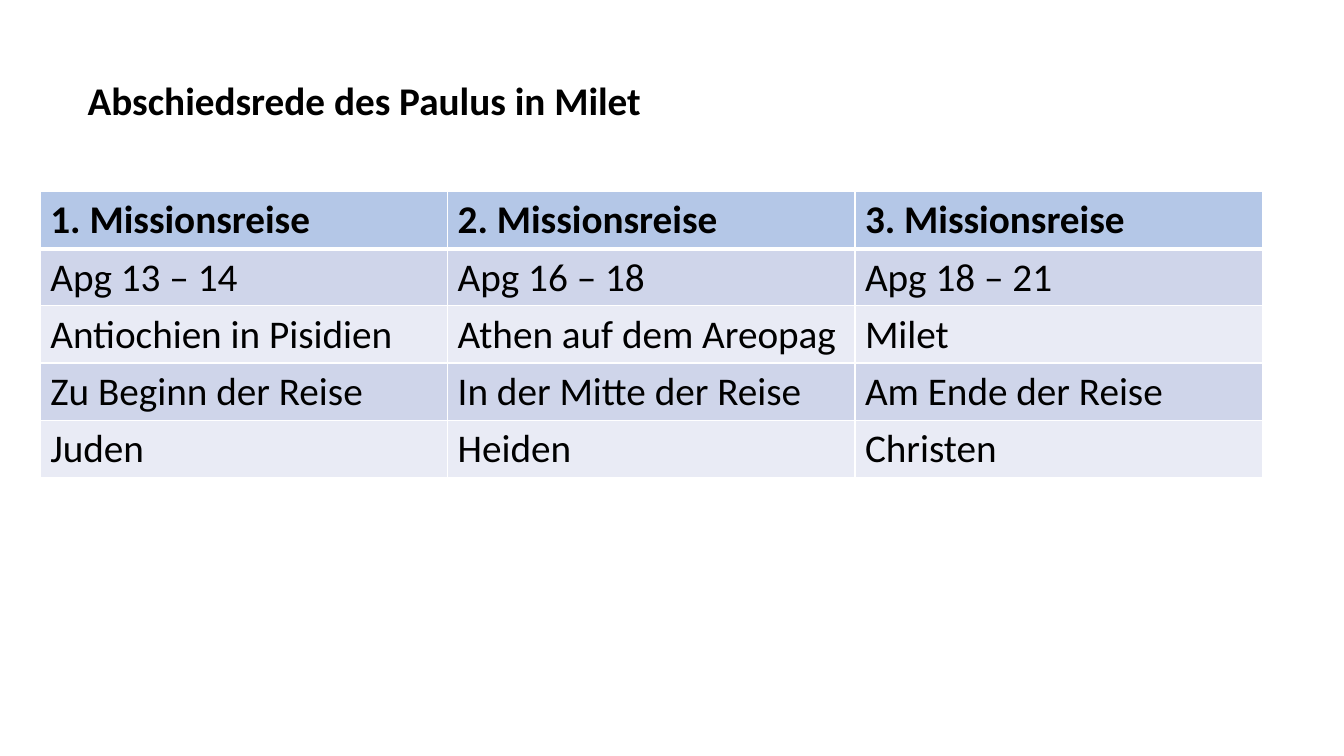
from lxml import etree
from pptx import Presentation
from pptx.dml.color import RGBColor
from pptx.enum.text import MSO_ANCHOR, MSO_AUTO_SIZE, PP_ALIGN
from pptx.oxml.ns import qn
from pptx.util import Inches, Pt

LEFT = PP_ALIGN.LEFT
TOP = MSO_ANCHOR.TOP
GROW = MSO_AUTO_SIZE.SHAPE_TO_FIT_TEXT
TITLE_ONLY = 5

COLOURS = {
    "text": "000000",
    "header": "B4C7E7",
    "band_dark": "CFD5EA",
    "band_light": "E9EBF5",
    "rule": "FFFFFF",
}

TITLE = "Abschiedsrede des Paulus in Milet"
JOURNEYS = [
    ["1. Missionsreise", "2. Missionsreise", "3. Missionsreise"],
    ["Apg 13 – 14", "Apg 16 – 18", "Apg 18 – 21"],
    ["Antiochien in Pisidien", "Athen auf dem Areopag", "Milet"],
    ["Zu Beginn der Reise", "In der Mitte der Reise", "Am Ende der Reise"],
    ["Juden", "Heiden", "Christen"],
]


def write_text(frame, text, font="Calibri", size=28, bold=False, colour="text"):
    """Fill a text frame with one left-aligned, formatted paragraph."""
    para = frame.paragraphs[0]
    para.alignment = LEFT
    span = para.add_run()
    span.text = text
    span.font.name = font
    span.font.size = Pt(size)
    span.font.bold = bold
    span.font.color.rgb = RGBColor.from_string(COLOURS[colour])


class SlideBuilder:
    """Places elements on one slide, with lengths in inches."""

    def __init__(self, page):
        self.page = page

    def title(self, text, left, top, width, height):
        box = self.page.shapes.title
        box.left, box.top = Inches(left), Inches(top)
        box.width, box.height = Inches(width), Inches(height)
        frame = box.text_frame
        frame.word_wrap = False
        frame.auto_size = GROW
        frame.vertical_anchor = TOP
        write_text(frame, text, bold=True)

    def table(self, rows, left, top, column_width, row_height):
        row_count, column_count = len(rows), len(rows[0])
        grid = self.page.shapes.add_table(
            row_count, column_count, Inches(left), Inches(top),
            Inches(column_width * column_count), Inches(row_height * row_count),
        ).table
        for row_index, row in enumerate(rows):
            for column_index, text in enumerate(row):
                cell = grid.cell(row_index, column_index)
                # Heavier rule between the header and the body
                self.borders(cell, top=3 if row_index == 1 else 1,
                             bottom=3 if row_index == 0 else 1)
                self.fill(cell, row_index)
                write_text(cell.text_frame, text, bold=row_index == 0)

    def fill(self, cell, row_index):
        band = "band_dark" if row_index % 2 else "band_light"
        cell.fill.solid()
        cell.fill.fore_color.rgb = RGBColor.from_string(
            COLOURS[band if row_index else "header"])

    def borders(self, cell, top, bottom):
        properties = cell._tc.get_or_add_tcPr()
        for side, width in (("L", 1), ("R", 1), ("T", top), ("B", bottom)):
            line = etree.SubElement(properties, qn(f"a:ln{side}"), w=str(Pt(width)))
            paint = etree.SubElement(line, qn("a:solidFill"))
            etree.SubElement(paint, qn("a:srgbClr"), val=COLOURS["rule"])


def main():
    deck = Presentation()
    deck.slide_width, deck.slide_height = Inches(13.33), Inches(7.5)
    page = deck.slides.add_slide(deck.slide_layouts[TITLE_ONLY])
    builder = SlideBuilder(page)

    # Heading
    builder.title(TITLE, left=0.77, top=0.71, width=5.75, height=0.57)

    # Comparison of the three journeys
    builder.table(JOURNEYS, left=0.4, top=1.9, column_width=4.04, row_height=0.41)

    deck.save("out.pptx")


if __name__ == "__main__":
    main()
